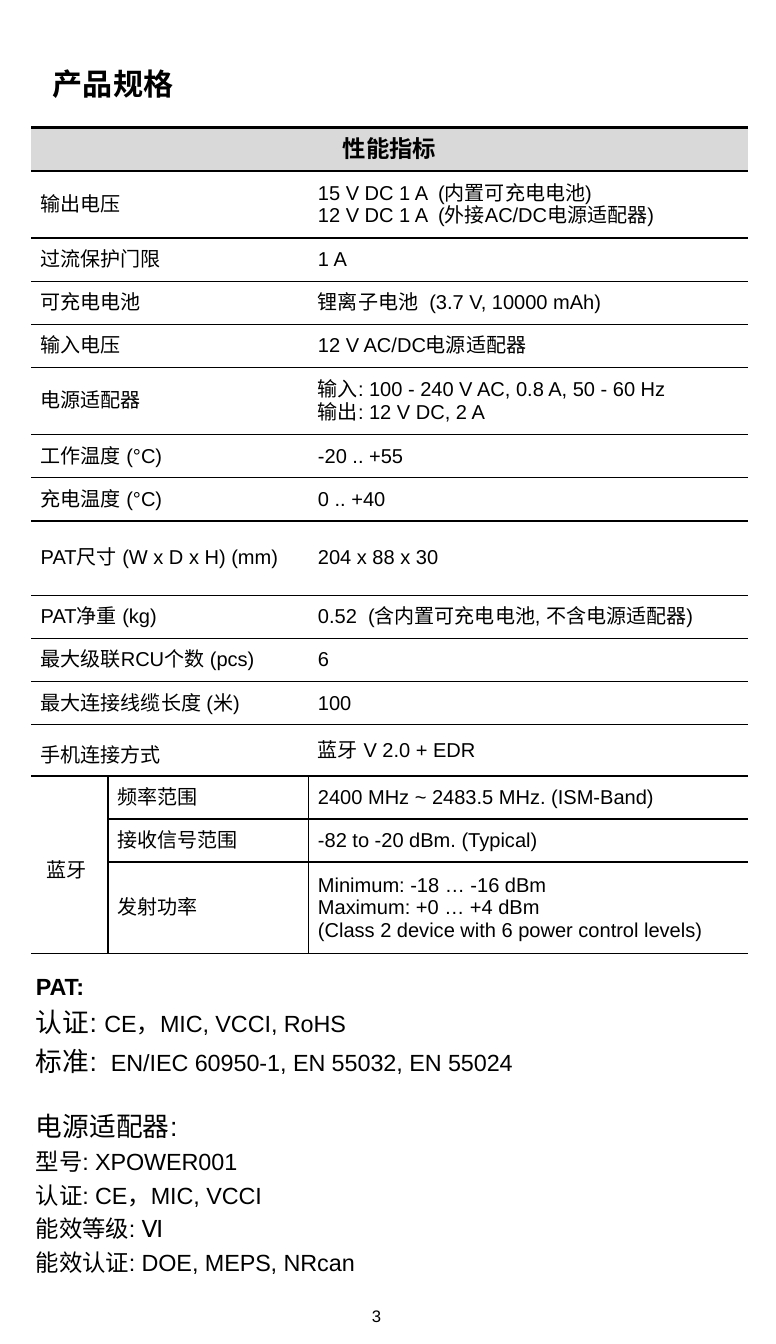
from dataclasses import dataclass

from lxml.etree import SubElement
from pptx import Presentation
from pptx.dml.color import RGBColor
from pptx.enum.text import MSO_ANCHOR, PP_ALIGN
from pptx.oxml.ns import qn
from pptx.util import Cm, Pt


@dataclass(frozen=True)
class Theme:
    ink: str = "000000"
    band: str = "D9D9D9"
    font: str = "Arial"
    title_font: str = "Noto Sans CJK SC"
    title: float = 9
    heading: float = 8
    body: float = 7
    cell: float = 6
    page: float = 5
    rule: float = 0.5
    heavy_rule: float = 1


THEME = Theme()

# Row height, label, values, space around label, space around values
SPECS = [
    (0.71, "输出电压", ["15 V DC 1 A  (内置可充电电池)", "12 V DC 1 A  (外接AC/DC电源适配器)"], 2, 0),
    (0.45, "过流保护门限", ["1 A"], 2, 0),
    (0.45, "可充电电池", ["锂离子电池  (3.7 V, 10000 mAh)"], 2, 0),
    (0.45, "输入电压", ["12 V AC/DC电源适配器"], 2, 0),
    (0.71, "电源适配器", ["输入: 100 - 240 V AC, 0.8 A, 50 - 60 Hz", "输出: 12 V DC, 2 A"], 2, 0),
    (0.45, "工作温度 (°C)", ["-20 .. +55"], 0, 2.4),
    (0.45, "充电温度 (°C)", ["0 .. +40"], 0, 2.4),
    (0.79, "PAT尺寸 (W x D x H) (mm)", ["204 x 88 x 30"], 0, 2),
    (0.45, "PAT净重 (kg)", ["0.52  (含内置可充电电池, 不含电源适配器)"], 2, 2),
    (0.45, "最大级联RCU个数 (pcs)", ["6"], 2, 2),
    (0.45, "最大连接线缆长度 (米)", ["100"], 2, 2),
    (0.52, "手机连接方式", ["蓝牙 V 2.0 + EDR"], 0, 0),
]
BLUETOOTH = [
    (0.45, "频率范围", ["2400 MHz ~ 2483.5 MHz. (ISM-Band)"], 0, 0),
    (0.45, "接收信号范围", ["-82 to -20 dBm. (Typical)"], 0, 0),
    (0.95, "发射功率", ["Minimum: -18 … -16 dBm", "Maximum: +0 … +4 dBm",
                     "(Class 2 device with 6 power control levels)"], 0, 0),
]


def add_text(paragraph, text, size=THEME.cell, bold=False, font=THEME.font,
             align=None, space=0, spacing=None):
    """Append one formatted run and set the format of its paragraph."""
    run = paragraph.add_run()
    run.text = text
    run.font.size, run.font.bold, run.font.name = Pt(size), bold, font
    run.font.color.rgb = RGBColor.from_string(THEME.ink)
    SubElement(run._r.get_or_add_rPr(), qn("a:ea")).set("typeface", font)
    if align is not None:
        paragraph.alignment = align
    if space:
        paragraph.space_before = paragraph.space_after = Pt(space)
    if spacing:
        paragraph.line_spacing = spacing


def next_paragraph(frame, index):
    return frame.add_paragraph() if index else frame.paragraphs[0]


def set_borders(cell, **widths):
    """Draw the sides named L, R, T or B; clear the others."""
    properties = cell._tc.get_or_add_tcPr()
    for side in "LRTB":
        line = SubElement(properties, qn(f"a:ln{side}"))
        if side in widths:
            line.set("w", str(Pt(widths[side])))
            fill = SubElement(line, qn("a:solidFill"))
            SubElement(fill, qn("a:srgbClr")).set("val", THEME.ink)
        else:
            SubElement(line, qn("a:noFill"))


def fill_cell(cell, lines, pad=0.1, **text_format):
    cell.margin_left = cell.margin_right = Cm(0.1)
    cell.margin_top = cell.margin_bottom = Cm(pad)
    cell.vertical_anchor = MSO_ANCHOR.MIDDLE
    for index, line in enumerate(lines):
        add_text(next_paragraph(cell.text_frame, index), line, **text_format)


def add_block(slide, box, lines, inset=0.1, wrap=True, anchor=MSO_ANCHOR.TOP, **text_format):
    """Place a text box; each line is a list of (text, own format) runs."""
    frame = slide.shapes.add_textbox(*map(Cm, box)).text_frame
    frame.word_wrap, frame.vertical_anchor = wrap, anchor
    frame.margin_left = frame.margin_right = Cm(inset)
    frame.margin_top = frame.margin_bottom = Cm(min(inset, 0.13))
    for index, line in enumerate(lines):
        paragraph = next_paragraph(frame, index)
        for text, own_format in line:
            add_text(paragraph, text, **{**text_format, **own_format})


def add_spec_table(slide, box):
    entries = SPECS + BLUETOOTH
    first_bluetooth = len(SPECS) + 1
    heights = [0.44] + [entry[0] for entry in entries]
    table = slide.shapes.add_table(len(heights), 3, *map(Cm, box)).table
    table.first_row = table.horz_banding = False
    for column, width in zip(table.columns, (0.81, 2.12, box[2] - 2.93)):
        column.width = Cm(width)

    # Rules and fills
    for index, height in enumerate(heights):
        table.rows[index].height = Cm(height)
        for column in range(3):
            cell = table.cell(index, column)
            sides = {"T": THEME.heavy_rule if index < 2 else THEME.rule,
                     "B": THEME.heavy_rule if index == 0 else THEME.rule}
            split_label = index >= first_bluetooth
            if index and (column == 2 or column == 1 and split_label):
                sides["L"] = THEME.rule
            if index and (column == 1 or column == 0 and split_label):
                sides["R"] = THEME.rule
            set_borders(cell, **sides)
            if index:
                cell.fill.background()
            else:
                cell.fill.solid()
                cell.fill.fore_color.rgb = RGBColor.from_string(THEME.band)

    # Header
    header = table.cell(0, 0)
    header.merge(table.cell(0, 2))
    fill_cell(header, ["性能指标"], pad=0.08, size=THEME.body, bold=True,
              align=PP_ALIGN.CENTER, space=1.75)

    # Specification rows
    for index, (_, label, values, label_space, value_space) in enumerate(entries, 1):
        label_cell = table.cell(index, 1 if index >= first_bluetooth else 0)
        if index < first_bluetooth:
            label_cell.merge(table.cell(index, 1))
        connection = index == len(SPECS)
        fill_cell(label_cell, [label], pad=0.08 if connection else 0.1,
                  space=label_space, spacing=1.5 if connection else None)
        fill_cell(table.cell(index, 2), values, space=value_space)

    # Bluetooth group
    group = table.cell(first_bluetooth, 0)
    group.merge(table.cell(len(entries), 0))
    fill_cell(group, [" 蓝牙"], pad=0.08, spacing=1.5)


def add_certifications(slide, box):
    left, top, width, height = box
    large, strong = {"size": THEME.heading}, {"bold": True}
    add_block(slide, (left, top, width, 1.37), [
        [("PAT:", strong)],
        [("认证: ", large), ("CE，MIC, VCCI, RoHS", {})],
        [("标准: ", large), (" ", strong), ("EN/IEC 60950-1, EN 55032, EN 55024", {})],
    ], size=THEME.body, spacing=1.2)
    add_block(slide, (left, top + 1.45, width, height - 1.45), [
        [("电源适配器:", large)],
        [("型号:\u00a0XPOWER001", {})],
        [("认证: CE，MIC, VCCI", {})],
        [("能效等级: Ⅵ", {})],
        [("能效认证: DOE, MEPS, NRcan", {})],
    ], size=THEME.body, spacing=1.2)


def add_specification_page(presentation):
    slide = presentation.slides.add_slide(presentation.slide_layouts[6])
    add_block(slide, (0.33, 0.56, 7.57, 0.64), [[("产品规格", {})]], inset=0.23,
              anchor=MSO_ANCHOR.MIDDLE, size=THEME.title, bold=True, font=THEME.title_font)
    add_spec_table(slide, (0.33, 1.35, 7.57, 8.69))
    add_certifications(slide, (0.28, 10.11, 7.59, 3.5))
    add_block(slide, (3.68, 13.69, 0.61, 0.48), [[("3", {})]], inset=0.25,
              wrap=False, size=THEME.page)


def main():
    presentation = Presentation()
    presentation.slide_width, presentation.slide_height = Cm(8.2), Cm(14.2)
    add_specification_page(presentation)
    presentation.save("out.pptx")


if __name__ == "__main__":
    main()
